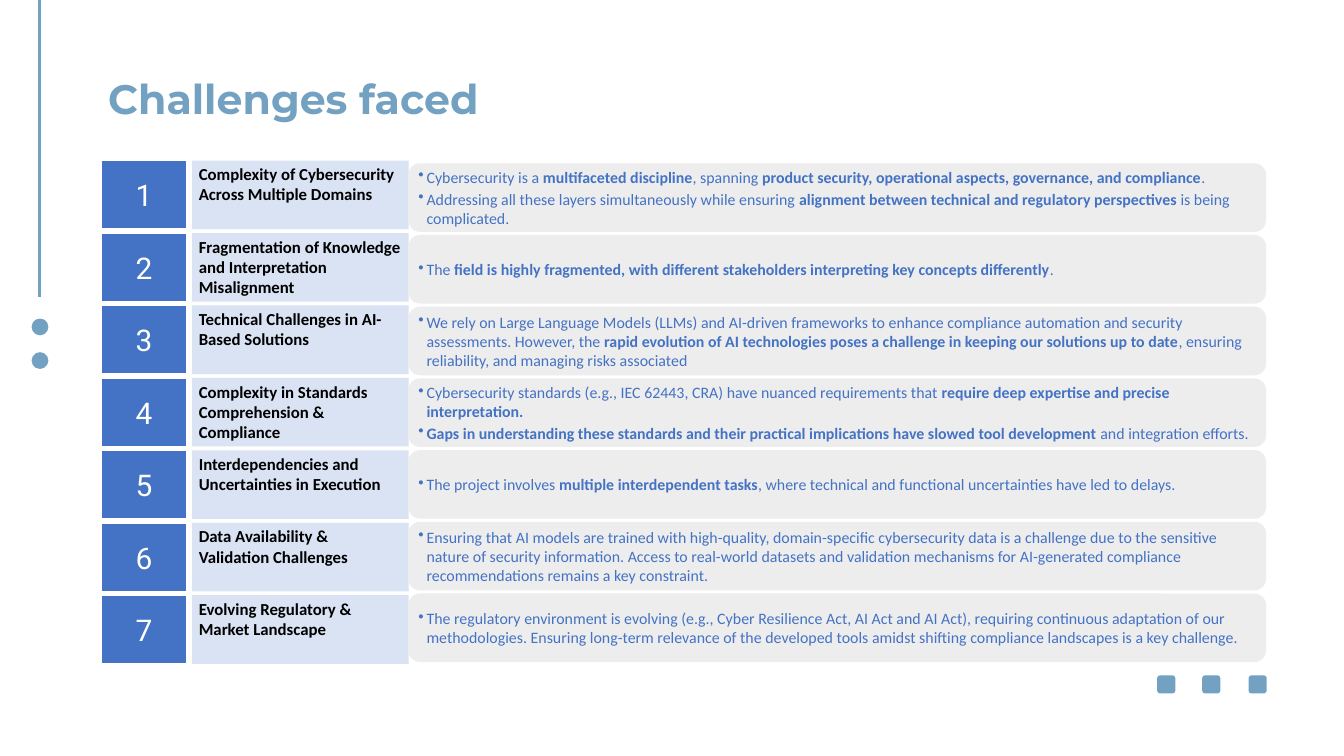
from lxml.etree import SubElement
from pptx import Presentation
from pptx.dml.color import RGBColor
from pptx.enum.shapes import MSO_CONNECTOR, MSO_SHAPE
from pptx.enum.text import MSO_ANCHOR, PP_ALIGN
from pptx.oxml.ns import qn
from pptx.util import Inches, Pt

COLORS = {
    "accent": "73A1C1",
    "number": "4472C4",
    "heading": "DAE3F3",
    "detail": "EDEDED",
    "white": "FFFFFF",
    "black": "000000",
}
COLUMNS, ROWS = 20, 11.25

# Each challenge: heading, then its points; ** surrounds bold words
CHALLENGES = [
    ("Complexity of Cybersecurity Across Multiple Domains", [
        "Cybersecurity is a **multifaceted discipline**, spanning **product security, "
        "operational aspects, governance, and compliance**.",
        "Addressing all these layers simultaneously while ensuring **alignment between "
        "technical and regulatory perspectives** is being complicated."]),
    ("Fragmentation of Knowledge and Interpretation Misalignment", [
        "The **field is highly fragmented, with different stakeholders interpreting "
        "key concepts differently**."]),
    ("Technical Challenges in AI-Based Solutions", [
        "We rely on Large Language Models (LLMs) and AI-driven frameworks to enhance "
        "compliance automation and security assessments. However, the **rapid evolution "
        "of AI technologies poses a challenge in keeping our solutions up to date**, "
        "ensuring reliability, and managing risks associated"]),
    ("Complexity in Standards Comprehension & Compliance", [
        "Cybersecurity standards (e.g., IEC 62443, CRA) have nuanced requirements that "
        "**require deep expertise and precise interpretation.**",
        "**Gaps in understanding these standards and their practical implications have "
        "slowed tool development **and integration efforts."]),
    ("Interdependencies and Uncertainties in Execution", [
        "The project involves **multiple interdependent tasks**, where technical and "
        "functional uncertainties have led to delays."]),
    ("Data Availability & Validation Challenges", [
        "Ensuring that AI models are trained with high-quality, domain-specific "
        "cybersecurity data is a challenge due to the sensitive nature of security "
        "information. Access to real-world datasets and validation mechanisms for "
        "AI-generated compliance recommendations remains a key constraint."]),
    ("Evolving Regulatory & Market Landscape", [
        "The regulatory environment is evolving (e.g., Cyber Resilience Act, AI Act and "
        "AI Act), requiring continuous adaptation of our methodologies. Ensuring "
        "long-term relevance of the developed tools amidst shifting compliance "
        "landscapes is a key challenge."]),
]


def rgb(name):
    return RGBColor.from_string(COLORS[name])


def write(frame, *paragraphs, font="Calibri", size=18, color="black", bold=False,
          align=PP_ALIGN.LEFT, anchor=MSO_ANCHOR.TOP, bullet=None, after=0, inset=0.05):
    """Fill a text frame; words between ** switch to the other weight."""
    frame.word_wrap = True
    frame.vertical_anchor = anchor
    frame.margin_top = frame.margin_bottom = Inches(inset)
    for index, content in enumerate(paragraphs):
        paragraph = frame.add_paragraph() if index else frame.paragraphs[0]
        paragraph.alignment = align
        paragraph.space_after = Pt(after)
        if bullet:
            properties = paragraph._p.get_or_add_pPr()
            properties.set("marL", str(Inches(0.12)))
            properties.set("indent", str(-Inches(0.12)))
            SubElement(properties, qn("a:buChar"), char=bullet)
        for part, words in enumerate(content.split("**")):
            if words:
                run = paragraph.add_run()
                run.text = words
                run.font.name = font
                run.font.size = Pt(size)
                run.font.bold = bold != (part % 2 == 1)
                run.font.color.rgb = rgb(color)


class SlideBuilder:
    """Places elements on a slide, measured in grid columns and rows."""

    def __init__(self, presentation):
        self.column = presentation.slide_width / COLUMNS
        self.row = presentation.slide_height / ROWS
        self.slide = presentation.slides.add_slide(presentation.slide_layouts[6])

    def place(self, x, y, *size):
        lengths = (x, y) + size
        units = (self.column, self.row) * 2
        return [round(length * unit) for length, unit in zip(lengths, units)]

    def text(self, box, content, **style):
        title = self.slide.shapes.add_textbox(*self.place(*box))
        write(title.text_frame, content, **style)

    def block(self, kind, box, fill, paragraphs=(), outline=None, **style):
        block = self.slide.shapes.add_shape(kind, *self.place(*box))
        block.shadow.inherit = False
        block.fill.solid()
        block.fill.fore_color.rgb = rgb(fill)
        if outline:
            block.line.color.rgb = rgb(outline)
            block.line.width = Pt(1.5)
        else:
            block.line.fill.background()
        if paragraphs:
            write(block.text_frame, *paragraphs, **style)

    def line(self, start, end, color, width):
        line = self.slide.shapes.add_connector(
            MSO_CONNECTOR.STRAIGHT, *self.place(*start), *self.place(*end))
        line.line.color.rgb = rgb(color)
        line.line.width = Pt(width)
        SubElement(line._element.spPr, qn("a:effectLst"))


def main():
    presentation = Presentation()
    presentation.slide_width = Inches(20)
    presentation.slide_height = Inches(11.25)
    builder = SlideBuilder(presentation)

    # Title
    builder.text((1.51, 1.05, 17.49, 0.84), "Challenges faced",
                 font="Montserrat", size=44, color="accent", bold=True)

    # Side ornament
    builder.line((0.59, 4.42), (0.59, 0), "accent", 3)
    for y in (4.74, 5.24):
        builder.block(MSO_SHAPE.OVAL, (0.47, y, 0.25, 0.25), "accent")

    # Plain squares for the social links
    for x in (17.22, 17.89, 18.58):
        builder.block(MSO_SHAPE.ROUNDED_RECTANGLE, (x, 10.05, 0.27, 0.27), "accent")

    # Challenge rows: heading, details, number
    height = 1.02
    for index, (heading, points) in enumerate(CHALLENGES):
        top = 2.39 + 1.078 * index
        detail_top = 2.43 + 1.067 * index
        builder.block(MSO_SHAPE.RECTANGLE, (2.86, top, 3.22, height), "heading",
                      [heading], bold=True)
        builder.block(MSO_SHAPE.ROUNDED_RECTANGLE, (6.08, detail_top, 12.76, height),
                      "detail", points, size=17, color="number",
                      anchor=MSO_ANCHOR.MIDDLE, bullet="•", after=3, inset=0)
        builder.block(MSO_SHAPE.RECTANGLE, (1.51, top, 1.27, height), "number",
                      [str(index + 1)], outline="white", font="Roboto", size=32,
                      color="white", align=PP_ALIGN.CENTER, anchor=MSO_ANCHOR.MIDDLE)

    presentation.save("out.pptx")


if __name__ == "__main__":
    main()
